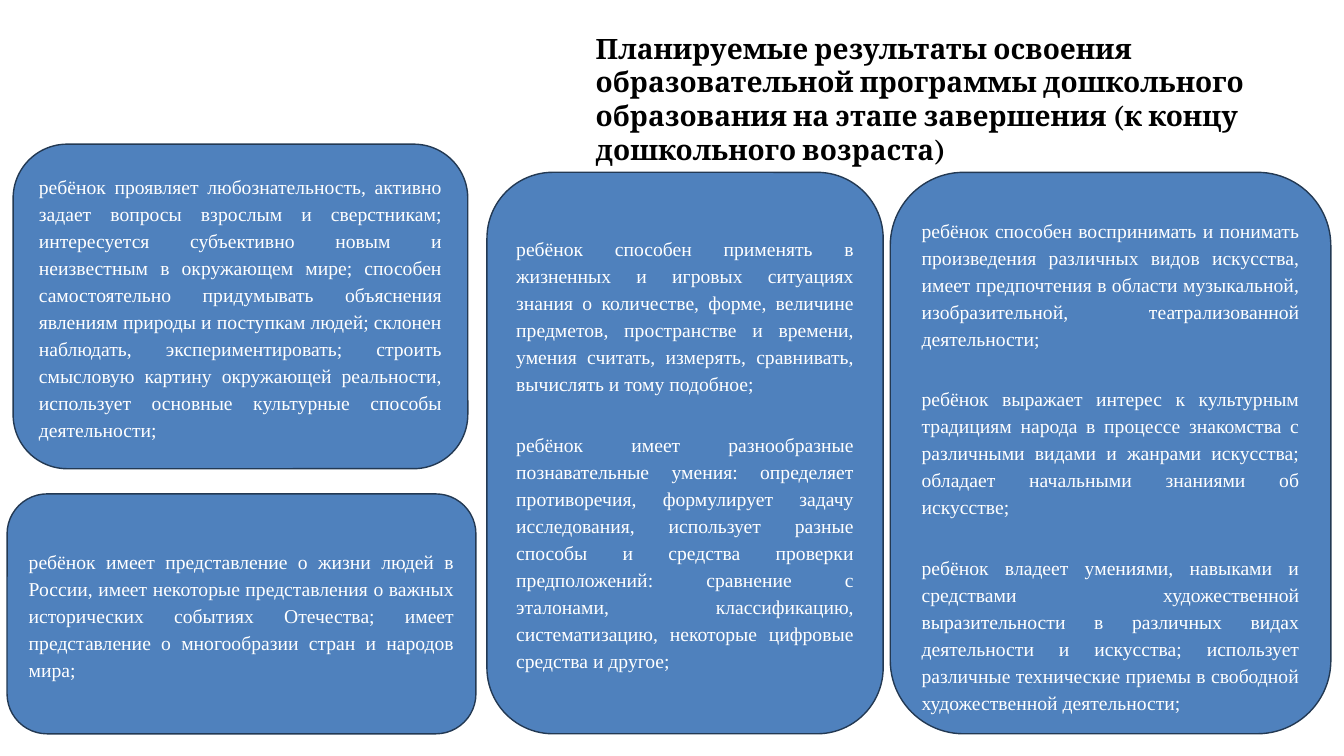
from dataclasses import dataclass

from pptx import Presentation
from pptx.dml.color import RGBColor
from pptx.enum.shapes import MSO_SHAPE
from pptx.enum.text import MSO_ANCHOR, MSO_AUTO_SIZE, PP_ALIGN
from pptx.slide import Slide
from pptx.util import Inches, Pt

ROUNDED = MSO_SHAPE.ROUNDED_RECTANGLE
TOP, MIDDLE = MSO_ANCHOR.TOP, MSO_ANCHOR.MIDDLE
JUSTIFY = PP_ALIGN.JUSTIFY
GROW = MSO_AUTO_SIZE.SHAPE_TO_FIT_TEXT

COLORS = {"card": "4F81BD", "border": "233953", "title": "000000", "body": "FFFFFF"}
TITLE_FONT = "Cambria"
BODY_FONT = "Times New Roman"
TITLE = (
    "Планируемые результаты освоения образовательной программы дошкольного "
    "образования на этапе завершения (к концу дошкольного возраста)"
)
TALL_TOP, TALL_HEIGHT = 1.71, 5.57


@dataclass(frozen=True)
class Card:
    left: float
    top: float
    width: float
    height: float
    outcomes: tuple[str, ...]
    anchor: MSO_ANCHOR = MIDDLE
    inset_top: float = 0.05
    inset_bottom: float = 0.05


CARDS = (
    Card(0.13, 1.43, 4.51, 3.22, (
        "ребёнок проявляет любознательность, активно задает вопросы взрослым и "
        "сверстникам; интересуется субъективно новым и неизвестным в окружающем "
        "мире; способен самостоятельно придумывать объяснения явлениям природы и "
        "поступкам людей; склонен наблюдать, экспериментировать; строить смысловую "
        "картину окружающей реальности, использует основные культурные способы "
        "деятельности;",
    )),
    Card(4.83, TALL_TOP, 3.93, TALL_HEIGHT, (
        "ребёнок способен применять в жизненных и игровых ситуациях знания о "
        "количестве, форме, величине предметов, пространстве и времени, умения "
        "считать, измерять, сравнивать, вычислять и тому подобное;",
        "ребёнок имеет разнообразные познавательные умения: определяет "
        "противоречия, формулирует задачу исследования, использует разные способы "
        "и средства проверки предположений: сравнение с эталонами, классификацию, "
        "систематизацию, некоторые цифровые средства и другое;",
    )),
    Card(0.07, 4.9, 4.65, 2.38, (
        "ребёнок имеет представление о жизни людей в России, имеет некоторые "
        "представления о важных исторических событиях Отечества; имеет "
        "представление о многообразии стран и народов мира;",
    )),
    Card(8.83, TALL_TOP, 4.37, TALL_HEIGHT, (
        "ребёнок способен воспринимать и понимать произведения различных видов "
        "искусства, имеет предпочтения в области музыкальной, изобразительной, "
        "театрализованной деятельности;",
        "ребёнок выражает интерес к культурным традициям народа в процессе "
        "знакомства с различными видами и жанрами искусства; обладает начальными "
        "знаниями об искусстве;",
        "ребёнок владеет умениями, навыками и средствами художественной "
        "выразительности в различных видах деятельности и искусства; использует "
        "различные технические приемы в свободной художественной деятельности;",
    ), TOP, 0.21, 0),
)


def color(name: str) -> RGBColor:
    return RGBColor.from_string(COLORS[name])


def add_title(page: Slide) -> None:
    box = page.shapes.add_textbox(Inches(5.81), Inches(0.26), Inches(7.39), Inches(1.45))
    frame = box.text_frame
    frame.word_wrap = True
    frame.auto_size = GROW
    span = frame.paragraphs[0].add_run()
    span.text = TITLE
    span.font.name = TITLE_FONT
    span.font.size = Pt(20)
    span.font.bold = True
    span.font.color.rgb = color("title")


def add_card(page: Slide, card: Card) -> None:
    box = page.shapes.add_shape(
        ROUNDED, Inches(card.left), Inches(card.top), Inches(card.width), Inches(card.height)
    )
    box.shadow.inherit = False
    box.fill.solid()
    box.fill.fore_color.rgb = color("card")
    box.line.color.rgb = color("border")
    box.line.width = Pt(1)

    frame = box.text_frame
    frame.word_wrap = True
    frame.vertical_anchor = card.anchor
    frame.margin_top = Inches(card.inset_top)
    frame.margin_bottom = Inches(card.inset_bottom)
    for index, outcome in enumerate(card.outcomes):
        para = frame.add_paragraph() if index else frame.paragraphs[0]
        para.alignment = JUSTIFY
        para.line_spacing = 1.15
        para.space_before = Pt(18 if index else 0)
        para.space_after = Pt(6)
        span = para.add_run()
        span.text = outcome
        span.font.name = BODY_FONT
        span.font.size = Pt(14)
        span.font.color.rgb = color("body")


def main() -> None:
    deck = Presentation()
    deck.slide_width = Inches(13.33)
    deck.slide_height = Inches(7.5)
    page = deck.slides.add_slide(deck.slide_layouts[6])
    add_title(page)
    for card in CARDS:
        add_card(page, card)
    deck.save("out.pptx")


if __name__ == "__main__":
    main()
